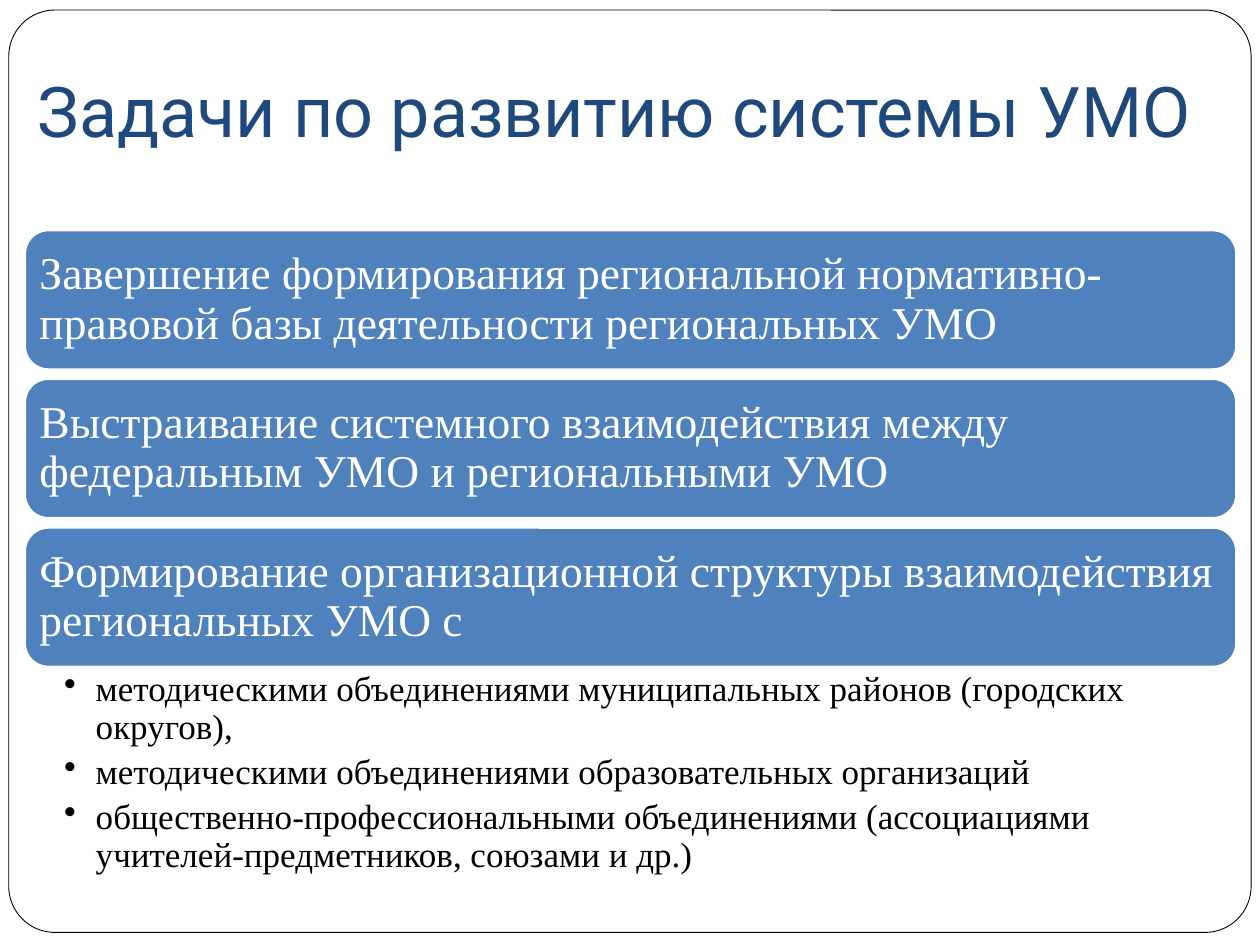
from pptx import Presentation
from pptx.dml.color import RGBColor
from pptx.enum import shapes, text
from pptx.oxml import parse_xml
from pptx.oxml.ns import nsdecls
from pptx.util import Inches, Pt

WHITE = RGBColor(0xFF, 0xFF, 0xFF)
BLACK = RGBColor(0, 0, 0)
NAVY = RGBColor(0x1F, 0x49, 0x7D)
BLUE = RGBColor(0x4F, 0x81, 0xBD)

LEFT, WIDTH = 0.2, 9.61
TASK_TOP, TASK_HEIGHT, TASK_STEP = 1.83, 1.1, 1.18

TITLE = "Задачи по развитию системы УМО"
TASKS = [
    "Завершение формирования региональной нормативно-правовой базы деятельности региональных УМО",
    "Выстраивание системного взаимодействия между федеральным УМО и региональными УМО",
    "Формирование организационной структуры взаимодействия региональных УМО с",
]
PARTNERS = [
    "методическими объединениями муниципальных районов (городских округов),",
    "методическими объединениями образовательных организаций",
    "общественно-профессиональными объединениями (ассоциациями учителей-предметников, союзами и др.)",
]


def setup_frame(tf, anchor, margins):
    """Set wrapping, anchor and the left, top, right, bottom margins in inches."""
    tf.word_wrap = True
    tf.auto_size = text.MSO_AUTO_SIZE.NONE
    tf.vertical_anchor = anchor
    tf.margin_left, tf.margin_top, tf.margin_right, tf.margin_bottom = map(Inches, margins)


def format_paragraph(p, font, size, color):
    p.alignment = text.PP_ALIGN.LEFT
    for r in p.runs:
        r.font.name = font
        r.font.size = Pt(size)
        r.font.color.rgb = color


def add_round_rect(s, left, top, width, height, fill, line, line_width):
    sp = s.shapes.add_shape(shapes.MSO_SHAPE.ROUNDED_RECTANGLE, Inches(left),
                            Inches(top), Inches(width), Inches(height))
    sp.shadow.inherit = False
    sp.fill.solid()
    sp.fill.fore_color.rgb = fill
    sp.line.color.rgb = line
    sp.line.width = Pt(line_width)
    return sp


def add_border(s):
    sp = add_round_rect(s, 0.07, 0.08, 9.86, 7.32, WHITE, BLACK, 0.5)
    sp.adjustments[0] = 0.05
    s.shapes.element.insert(2, sp.element)  # behind the title


def set_title(s):
    title = s.shapes.title
    title.left, title.top = Inches(LEFT), Inches(0.28)
    title.width, title.height = Inches(WIDTH), Inches(1.02)
    tf = title.text_frame
    tf.text = TITLE
    setup_frame(tf, text.MSO_ANCHOR.BOTTOM, (0.1, 0.05, 0.1, 0.1))
    format_paragraph(tf.paragraphs[0], "Roboto", 40, NAVY)


def add_task(s, top, task):
    sp = add_round_rect(s, LEFT, top, WIDTH, TASK_HEIGHT, BLUE, WHITE, 1)
    tf = sp.text_frame
    tf.text = task
    setup_frame(tf, text.MSO_ANCHOR.MIDDLE, (0.06, 0.06, 0.06, 0.06))
    p = tf.paragraphs[0]
    p.line_spacing = 0.9
    format_paragraph(p, "Times New Roman", 26, WHITE)


def add_bullet(p):
    pPr = p._p.get_or_add_pPr()
    pPr.set("marL", str(Inches(0.25)))
    pPr.set("indent", str(Inches(-0.25)))
    pPr.append(parse_xml(f'<a:buChar {nsdecls("a")} char="•"/>'))


def add_bullet_list(s, top, items):
    tb = s.shapes.add_textbox(Inches(LEFT), Inches(top), Inches(WIDTH), Inches(1.68))
    tf = tb.text_frame
    tf.text = "\n".join(items)
    setup_frame(tf, text.MSO_ANCHOR.TOP, (0.31, 0.04, 0.2, 0.04))
    for p in tf.paragraphs:
        p.line_spacing = 0.9
        p.space_after = Pt(4)
        format_paragraph(p, "Times New Roman", 20, BLACK)
        add_bullet(p)


def main():
    prs = Presentation()
    prs.slide_width, prs.slide_height = Inches(10), Inches(7.5)
    s = prs.slides.add_slide(prs.slide_layouts[5])
    add_border(s)
    set_title(s)
    for i, task in enumerate(TASKS):
        add_task(s, TASK_TOP + i * TASK_STEP, task)
    add_bullet_list(s, 5.29, PARTNERS)
    prs.save("out.pptx")


if __name__ == "__main__":
    main()
